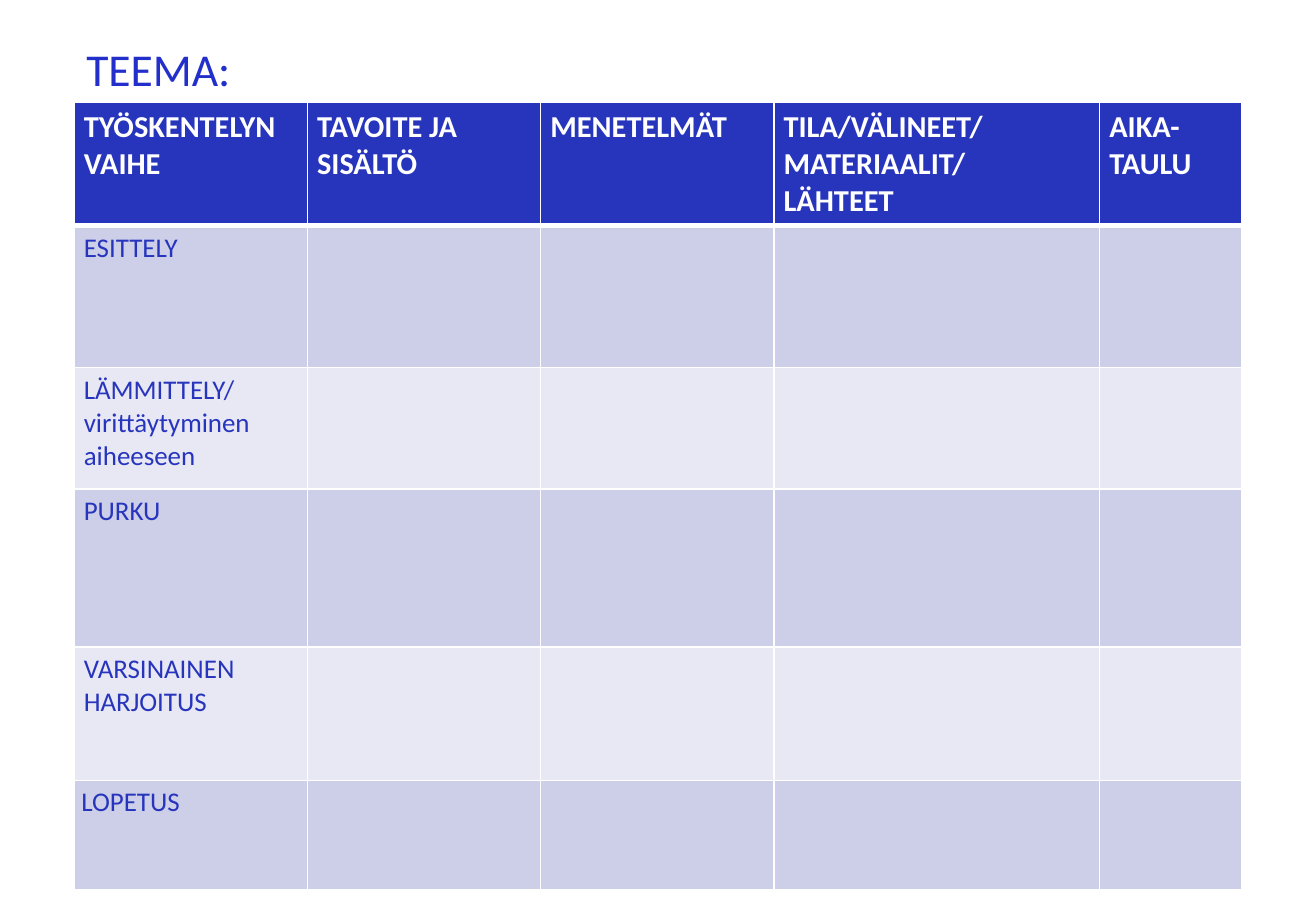
from lxml.etree import SubElement
from pptx import Presentation
from pptx.dml.color import RGBColor
from pptx.enum.text import MSO_ANCHOR, PP_ALIGN
from pptx.oxml.ns import qn
from pptx.util import Inches, Pt

FONT = "Calibri"
WHITE = RGBColor(0xFF, 0xFF, 0xFF)
TITLE_BLUE = RGBColor(0x23, 0x2F, 0xCB)
BLUE = RGBColor(0x27, 0x35, 0xBD)
BAND_DARK = RGBColor(0xCD, 0xCE, 0xE8)
BAND_LIGHT = RGBColor(0xE8, 0xE8, 0xF4)

COLUMN_WIDTHS = [1.92, 1.92, 1.92, 2.68, 1.17]
ROW_HEIGHTS = [1, 1.17, 1, 1.3, 1.1, 0.9]
HEADERS = [
    ["TYÖSKENTELYN", "VAIHE"],
    ["TAVOITE JA", "SISÄLTÖ"],
    ["MENETELMÄT"],
    ["TILA/VÄLINEET/ MATERIAALIT/", "LÄHTEET"],
    ["AIKA-TAULU"],
]
PHASES = [
    ["ESITTELY"],
    ["LÄMMITTELY/ virittäytyminen aiheeseen"],
    ["PURKU"],
    ["VARSINAINEN", "HARJOITUS"],
    ["LOPETUS"],
]


def add_run(p, text, size, color, bold=False):
    r = p.add_run()
    r.text = text
    r.font.name = FONT
    r.font.size = Pt(size)
    r.font.bold = bold
    r.font.color.rgb = color


def add_title(s, text):
    title = s.shapes.title
    title.left, title.top = Inches(0.61), Inches(0.2)
    title.width, title.height = Inches(9.49), Inches(0.64)
    tf = title.text_frame
    tf.vertical_anchor = MSO_ANCHOR.BOTTOM
    p = tf.paragraphs[0]
    p.alignment = PP_ALIGN.LEFT
    add_run(p, text, 27, TITLE_BLUE)


def set_margins(cell, side, vertical):
    cell.margin_left = cell.margin_right = Inches(side)
    cell.margin_top = cell.margin_bottom = Inches(vertical)


def set_borders(cell, bottom_width):
    tc_pr = cell._tc.get_or_add_tcPr()
    for tag, width in (("a:lnL", 1), ("a:lnR", 1), ("a:lnT", 1), ("a:lnB", bottom_width)):
        line = SubElement(tc_pr, qn(tag), w=str(Pt(width)))
        fill = SubElement(line, qn("a:solidFill"))
        SubElement(fill, qn("a:srgbClr"), val=str(WHITE))


def fill_cell(cell, lines, fill, size, color, bold=False, bottom_width=1):
    set_margins(cell, 0.08, 0.05)
    set_borders(cell, bottom_width)
    cell.fill.solid()
    cell.fill.fore_color.rgb = fill
    tf = cell.text_frame
    for i, line in enumerate(lines):
        p = tf.paragraphs[0] if i == 0 else tf.add_paragraph()
        add_run(p, line, size, color, bold)


def add_plan_table(s):
    table = s.shapes.add_table(
        len(ROW_HEIGHTS), len(COLUMN_WIDTHS),
        Inches(0.61), Inches(0.84),
        Inches(sum(COLUMN_WIDTHS)), Inches(sum(ROW_HEIGHTS)),
    ).table
    for column, width in zip(table.columns, COLUMN_WIDTHS):
        column.width = Inches(width)
    for row, height in zip(table.rows, ROW_HEIGHTS):
        row.height = Inches(height)

    for col, lines in enumerate(HEADERS):
        fill_cell(table.cell(0, col), lines, BLUE, 18, WHITE, bold=True, bottom_width=3)
    for row, phase in enumerate(PHASES, start=1):
        band = BAND_DARK if row % 2 else BAND_LIGHT
        for col in range(len(COLUMN_WIDTHS)):
            fill_cell(table.cell(row, col), phase if col == 0 else [], band, 16, BLUE)

    closing = table.cell(len(PHASES), 0)
    set_margins(closing, 0.06, 0)
    p = closing.text_frame.paragraphs[0]
    p.line_spacing = 1.15
    p.space_after = Pt(10)


def main():
    prs = Presentation()
    prs.slide_width, prs.slide_height = Inches(10.83), Inches(7.5)
    s = prs.slides.add_slide(prs.slide_layouts[5])
    add_title(s, "TEEMA:")
    add_plan_table(s)
    prs.save("out.pptx")


if __name__ == "__main__":
    main()
